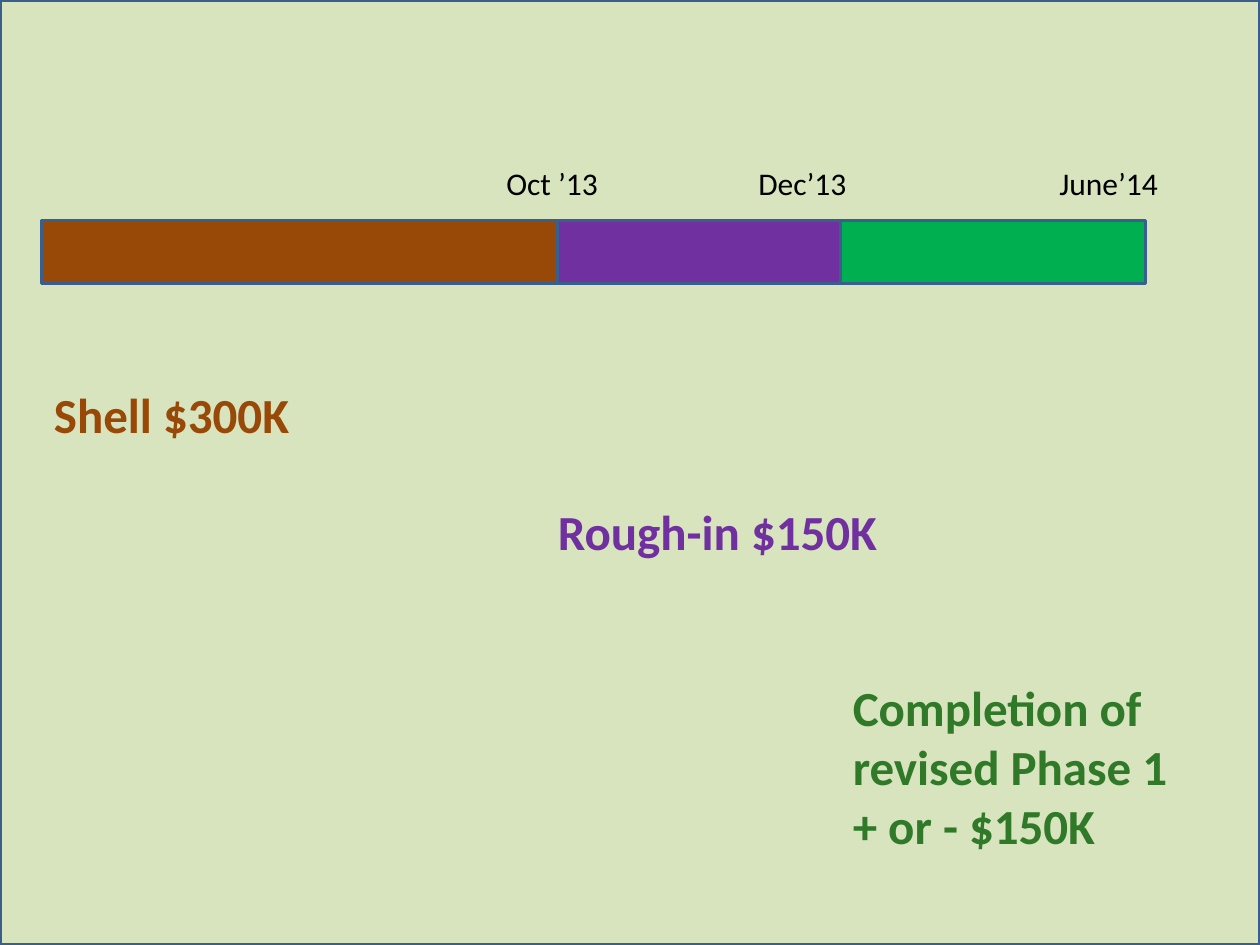
import pptx
import pptx.dml.color
import pptx.enum.shapes
import pptx.util

Inches = pptx.util.Inches
Pt = pptx.util.Pt
RGBColor = pptx.dml.color.RGBColor

BACKDROP = RGBColor(0xD7, 0xE4, 0xBD)
OUTLINE = RGBColor(0x3A, 0x5F, 0x8C)
BROWN = RGBColor(0x98, 0x48, 0x07)
PURPLE = RGBColor(0x70, 0x30, 0xA0)
GREEN = RGBColor(0x00, 0xB0, 0x50)
DARK_GREEN = RGBColor(0x2F, 0x79, 0x29)
BLACK = RGBColor(0, 0, 0)

DATE_FORMAT = {"name": "Calibri", "size": Pt(18), "bold": False}
COST_FORMAT = {"name": "Calibri", "size": Pt(28), "bold": True}

deck = pptx.Presentation()
deck.slide_width = Inches(10)
deck.slide_height = Inches(7.5)
timeline = deck.slides.add_slide(deck.slide_layouts[6])


def add_block(left, top, width, height, color):
    block = timeline.shapes.add_shape(
        pptx.enum.shapes.MSO_SHAPE.RECTANGLE,
        Inches(left), Inches(top), Inches(width), Inches(height))
    block.shadow.inherit = False
    block.fill.solid()
    block.fill.fore_color.rgb = color
    block.line.color.rgb = OUTLINE
    block.line.width = Pt(2)


def add_label(left, top, width, height, lines, color, font_format):
    label = timeline.shapes.add_textbox(
        Inches(left), Inches(top), Inches(width), Inches(height))
    label.text_frame.word_wrap = True
    label.text_frame.text = "\n".join(lines)
    for line in label.text_frame.paragraphs:
        font = line.runs[0].font
        font.color.rgb = color
        for attribute, value in font_format.items():
            setattr(font, attribute, value)


add_block(0, 0, 10, 7.5, BACKDROP)

phase_edges = [0.33, 4.42, 6.67, 9.09]
for start, end, color in zip(phase_edges, phase_edges[1:], [BROWN, PURPLE, GREEN]):
    add_block(start, 1.75, end - start, 0.5, color)

for left, date in [(3.92, "Oct ’13"), (5.92, "Dec’13"), (8.31, "June’14")]:
    add_label(left, 1.25, 1.5, 0.4, [date], BLACK, DATE_FORMAT)

costs = [
    (0.33, 3, 3.5, 0.57, ["Shell $300K"], BROWN),
    (4.33, 3.93, 3.5, 0.57, ["Rough-in $150K"], PURPLE),
    (6.67, 5.33, 3.17, 1.51,
     ["Completion of revised Phase 1", "+ or - $150K"], DARK_GREEN),
]
for cost in costs:
    add_label(*cost, COST_FORMAT)

deck.save("out.pptx")
